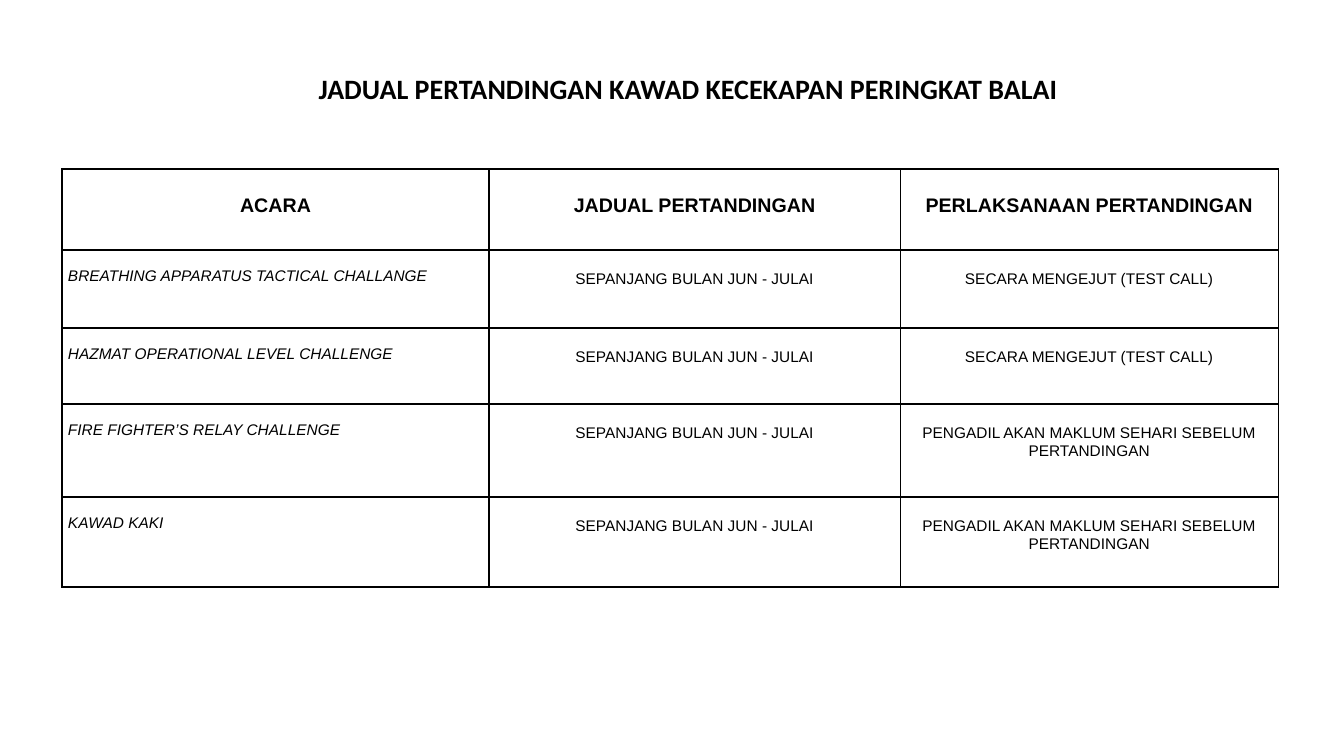
import pptx
import pptx.dml.color
import pptx.enum.text
import pptx.oxml
import pptx.oxml.ns
import pptx.util
from dataclasses import dataclass

ALIGN = pptx.enum.text.PP_ALIGN
ANCHOR = pptx.enum.text.MSO_ANCHOR


@dataclass
class Theme:
    ink: str = "000000"
    paper: str = "FFFFFF"
    title_font: str = "Calibri"
    font: str = "Arial"
    title_size: int = 20
    head_size: int = 14
    body_size: int = 11
    rule: int = 1


def px(n):
    """Turn slide pixels (100.8 to the inch) into EMU."""
    return pptx.util.Emu(round(n * 914400 / 100.8))


class Deck:
    def __init__(self, theme):
        self.theme = theme
        self.prs = pptx.Presentation()
        self.prs.slide_width = pptx.util.Inches(13.33)
        self.prs.slide_height = pptx.util.Inches(7.5)
        self.slide = self.prs.slides.add_slide(self.prs.slide_layouts[5])

    def color(self, code):
        return pptx.dml.color.RGBColor.from_string(code)

    def style(self, frame, font, size, align, bold=False, italic=False, spacing=1.0):
        for para in frame.paragraphs:
            para.alignment = align
            para.line_spacing = spacing
            for run in para.runs:
                run.font.name = font
                run.font.size = pptx.util.Pt(size)
                run.font.bold = bold
                run.font.italic = italic
                run.font.color.rgb = self.color(self.theme.ink)

    def title(self, text, left, top, width, height):
        shape = self.slide.shapes.title
        shape.left, shape.top = px(left), px(top)
        shape.width, shape.height = px(width), px(height)
        frame = shape.text_frame
        frame.text = text
        frame.word_wrap = True
        frame.auto_size = pptx.enum.text.MSO_AUTO_SIZE.NONE
        frame.vertical_anchor = ANCHOR.MIDDLE
        self.style(frame, self.theme.title_font, self.theme.title_size,
                   ALIGN.CENTER, bold=True)

    def border(self, cell):
        props = cell._tc.get_or_add_tcPr()
        width = pptx.util.Pt(self.theme.rule)
        for spot, side in enumerate(("lnL", "lnR", "lnT", "lnB")):
            props.insert(spot, pptx.oxml.parse_xml(
                f'<a:{side} {pptx.oxml.ns.nsdecls("a")} w="{width}"><a:solidFill>'
                f'<a:srgbClr val="{self.theme.ink}"/></a:solidFill></a:{side}>'))

    def cell(self, cell, text, inset, **look):
        cell.margin_left = cell.margin_right = px(6)
        cell.margin_top, cell.margin_bottom = px(inset), 0
        cell.vertical_anchor = ANCHOR.TOP
        cell.fill.solid()
        cell.fill.fore_color.rgb = self.color(self.theme.paper)
        cell.text_frame.text = text
        self.style(cell.text_frame, self.theme.font, **look)
        self.border(cell)

    def table(self, rows, left, top, widths, heights):
        """Draw a bold head row, italic first column and centred body."""
        table = self.slide.shapes.add_table(
            len(rows), len(widths), px(left), px(top),
            px(sum(widths)), px(sum(heights))).table
        table.first_row = table.horz_banding = False
        for col, width in zip(table.columns, widths):
            col.width = px(width)
        for row, height in zip(table.rows, heights):
            row.height = px(height)
        head = dict(inset=24, size=self.theme.head_size, align=ALIGN.CENTER,
                    bold=True, spacing=1.07)
        event = dict(inset=18, size=self.theme.body_size, align=ALIGN.LEFT,
                     italic=True)
        body = dict(inset=19, size=self.theme.body_size, align=ALIGN.CENTER,
                    spacing=1.07)
        for r, row in enumerate(rows):
            for c, text in enumerate(row):
                look = head if r == 0 else event if c == 0 else body
                self.cell(table.cell(r, c), text, **look)

    def save(self):
        self.prs.save("out.pptx")


def main():
    when = "SEPANJANG BULAN JUN - JULAI"
    drill = "SECARA MENGEJUT (TEST CALL)"
    notice = "PENGADIL AKAN MAKLUM SEHARI SEBELUM PERTANDINGAN"
    rows = [
        ("ACARA", "JADUAL PERTANDINGAN", "PERLAKSANAAN PERTANDINGAN"),
        ("BREATHING APPARATUS TACTICAL CHALLANGE", when, drill),
        ("HAZMAT OPERATIONAL LEVEL CHALLENGE", when, drill),
        ("FIRE FIGHTER’S RELAY CHALLENGE", when, notice),
        ("KAWAD KAKI", when, notice),
    ]
    deck = Deck(Theme())
    deck.title("JADUAL PERTANDINGAN KAWAD KECEKAPAN PERINGKAT BALAI",
               253, 66, 870, 44)
    deck.table(rows, 62, 169, (427, 411, 378), (81, 78, 76, 93, 90))
    deck.save()


if __name__ == "__main__":
    main()
